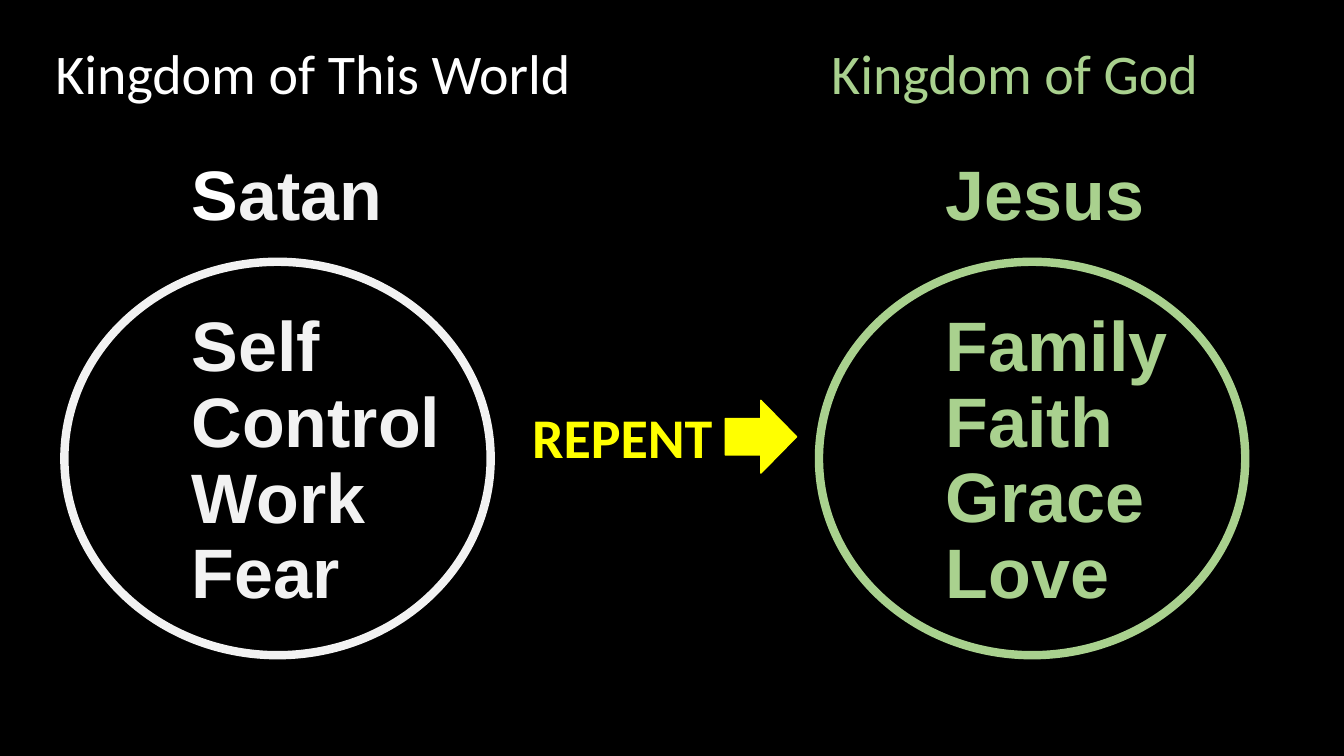
from pptx import Presentation
from pptx.dml.color import RGBColor
from pptx.enum import shapes, text
from pptx.util import Pt

WHITE, PALE, GREEN, YELLOW = "FFFFFF", "F2F2F2", "A9D18E", "FFFF00"
SIDE_STEP = 539  # distance from the left kingdom to the right one
LEFT, CENTER = text.PP_ALIGN.LEFT, text.PP_ALIGN.CENTER
HEADING = {"name": "Calibri", "size": Pt(40), "bold": False}
CALL = {**HEADING, "bold": True}
LISTING = {"name": "Arial", "size": Pt(50), "bold": True}
LIST_PITCH = Pt(54)


def set_format(target, values):
    for name, value in values.items():
        setattr(target, name, value)


def paint(fill, color):
    fill.solid()
    fill.fore_color.rgb = RGBColor.from_string(color)


def place(sp, left, top, width, height):
    set_format(sp, {"left": Pt(left), "top": Pt(top),
                    "width": Pt(width), "height": Pt(height)})


def add_runs(p, runs, font):
    for words, color in runs:
        r = p.add_run()
        r.text = words
        set_format(r.font, font)
        r.font.color.rgb = RGBColor.from_string(color)


def add_label(slide, words, color, box, font, align):
    """Add one unwrapped line of text."""
    sp = slide.shapes.add_textbox(*map(Pt, box))
    tf = sp.text_frame
    tf.word_wrap = False
    p = tf.paragraphs[0]
    p.alignment = align
    add_runs(p, [(words, color)], font)


def fill_list(sp, ruler, traits, color):
    """Write the ruler's name, a one-line gap and the traits below it."""
    tf = sp.text_frame
    set_format(tf, {"word_wrap": True, "auto_size": text.MSO_AUTO_SIZE.NONE,
                    "vertical_anchor": text.MSO_ANCHOR.TOP})
    for i, runs in enumerate([ruler] + [[(t, color)] for t in traits]):
        p = tf.add_paragraph() if i else tf.paragraphs[0]
        set_format(p, {"alignment": LEFT, "line_spacing": LIST_PITCH,
                       "space_before": Pt(0),
                       "space_after": Pt(0) if i else LIST_PITCH})
        add_runs(p, runs, LISTING)


def add_ring(slide, left, color):
    sp = slide.shapes.add_shape(shapes.MSO_SHAPE.OVAL,
                                *map(Pt, (left, 187, 304.5, 281)))
    sp.shadow.inherit = False
    sp.fill.background()
    paint(sp.line.fill, color)
    sp.line.width = Pt(6)


def add_arrow(slide, box, color):
    sp = slide.shapes.add_shape(shapes.MSO_SHAPE.RIGHT_ARROW, *map(Pt, box))
    sp.shadow.inherit = False
    paint(sp.fill, color)
    paint(sp.line.fill, color)
    sp.line.width = Pt(1)


def main():
    prs = Presentation()
    set_format(prs, {"slide_width": Pt(960), "slide_height": Pt(540)})
    slide = prs.slides.add_slide(prs.slide_layouts[5])
    paint(slide.background.fill, "000000")

    for side, color in enumerate((PALE, GREEN)):
        add_ring(slide, 46 + side * SIDE_STEP, color)

    world = slide.shapes.title
    place(world, 129.6, 110, 304.5, 320)
    fill_list(world, [("S", WHITE), ("atan", PALE)],
              ["Self", "Control", "Work", "Fear"], PALE)
    god = slide.shapes.add_textbox(0, 0, 0, 0)
    place(god, 129.6 + SIDE_STEP, 110, 290, 323)
    fill_list(god, [("Jesus", GREEN)],
              ["Family", "Faith", "Grace", "Love"], GREEN)

    add_label(slide, "Kingdom of This World", WHITE,
              (30, 24, 387, 55.5), HEADING, CENTER)
    add_label(slide, "Kingdom of God", GREEN,
              (585, 24, 279.5, 55.5), HEADING, CENTER)
    add_label(slide, "REPENT", YELLOW, (373, 284, 145, 55.5), CALL, LEFT)
    add_arrow(slide, (518, 286, 51, 52), YELLOW)
    prs.save("out.pptx")


if __name__ == "__main__":
    main()
